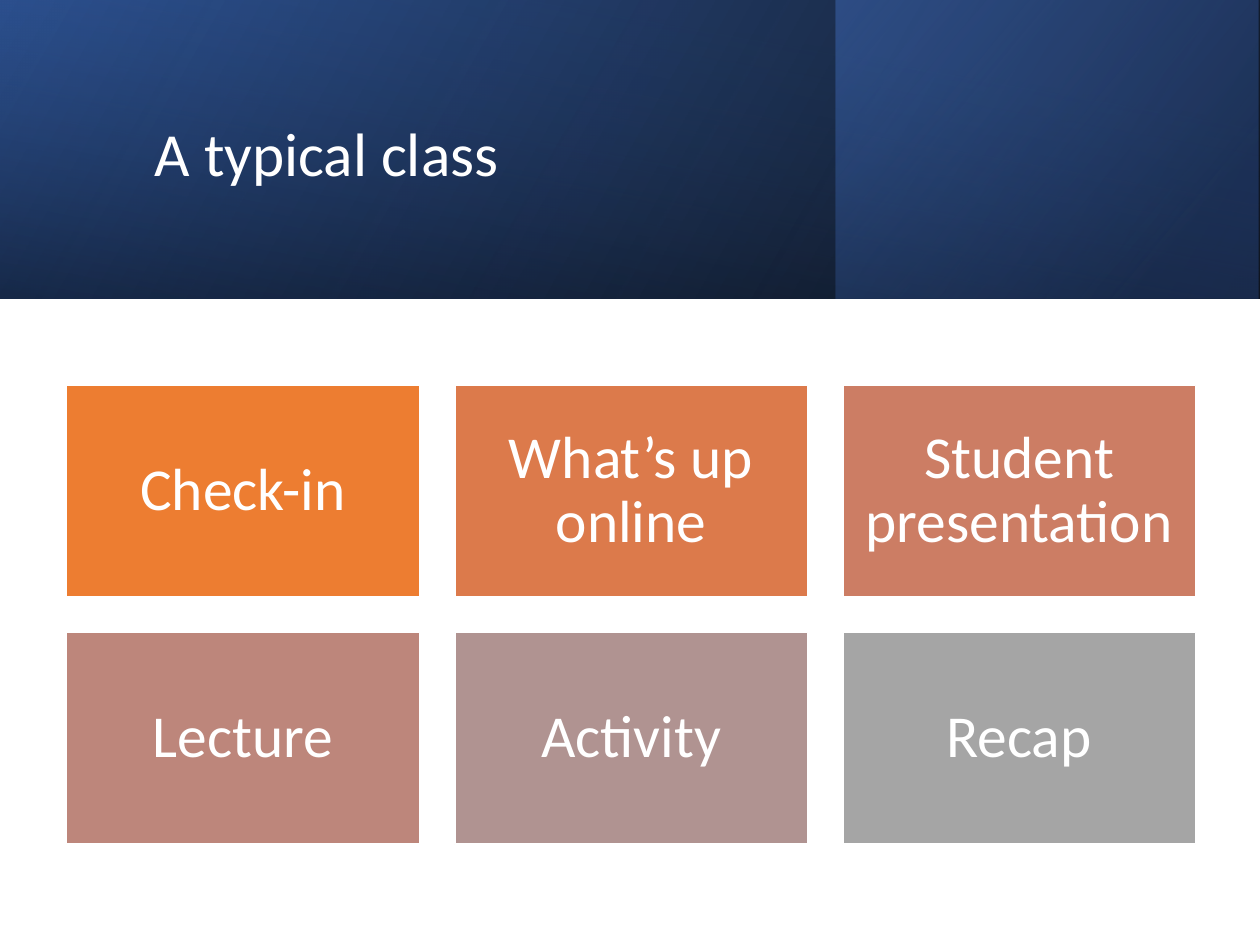
from lxml import etree
from pptx import Presentation
from pptx.dml.color import RGBColor
from pptx.enum.shapes import MSO_SHAPE
from pptx.enum.text import MSO_ANCHOR, PP_ALIGN
from pptx.oxml.ns import qn
from pptx.util import Pt

RECT = MSO_SHAPE.RECTANGLE
MIDDLE = MSO_ANCHOR.MIDDLE
LEFT, CENTER = PP_ALIGN.LEFT, PP_ALIGN.CENTER

WHITE = RGBColor(0xFF, 0xFF, 0xFF)
BLACK = RGBColor(0x00, 0x00, 0x00)
BLUE = RGBColor(0x44, 0x72, 0xC4)
MID_BLUE = RGBColor(0x2F, 0x55, 0x97)
DARK_BLUE = RGBColor(0x20, 0x38, 0x64)

FONT = "Calibri"
COLUMNS = 3
GAP = 20.16
CARDS = [
    ("Check-in", RGBColor(0xED, 0x7D, 0x31)),
    ("What’s up online", RGBColor(0xDC, 0x7A, 0x4B)),
    ("Student presentation", RGBColor(0xCC, 0x7D, 0x64)),
    ("Lecture", RGBColor(0xBD, 0x86, 0x7B)),
    ("Activity", RGBColor(0xB0, 0x93, 0x91)),
    ("Recap", RGBColor(0xA5, 0xA5, 0xA5)),
]


def add_rect(slide, x, y, w, h):
    s = slide.shapes.add_shape(RECT, Pt(x), Pt(y), Pt(w), Pt(h))
    s.shadow.inherit = False
    return s


def add_gradient_rect(slide, box, stops, angle, rotation=0):
    """Add a mirrored rectangle; stops are (position %, colour, opacity %)."""
    s = add_rect(slide, *box)
    s.line.fill.background()
    s.rotation = rotation
    sp_pr = s._element.spPr
    sp_pr.find(qn("a:xfrm")).set("flipH", "1")

    grad = etree.Element(qn("a:gradFill"), rotWithShape="1")
    stop_list = etree.SubElement(grad, qn("a:gsLst"))
    for position, color, opacity in stops:
        stop = etree.SubElement(stop_list, qn("a:gs"), pos=str(position * 1000))
        clr = etree.SubElement(stop, qn("a:srgbClr"), val=str(color))
        if opacity < 100:
            etree.SubElement(clr, qn("a:alpha"), val=str(opacity * 1000))
    etree.SubElement(grad, qn("a:lin"), ang=str(angle * 60000), scaled="0")
    sp_pr.find(qn("a:prstGeom")).addnext(grad)


def write_text(s, text, size, align):
    tf = s.text_frame
    tf.word_wrap = True
    tf.vertical_anchor = MIDDLE
    p = tf.paragraphs[0]
    p.alignment = align
    p.line_spacing = 0.9
    r = p.add_run()
    r.text = text
    r.font.name = FONT
    r.font.size = Pt(size)
    r.font.color.rgb = WHITE
    return tf


def add_header(slide, x, y, w, h):
    add_gradient_rect(slide, (x, y, w, h),
                      [(0, BLACK, 96), (100, MID_BLUE, 100)], 330)
    panel_x = x + 477.5
    add_gradient_rect(slide, (panel_x, y, x + w - 0.7 - panel_x, h),
                      [(19, DARK_BLUE, 68), (100, BLUE, 48)], 320)
    # A quarter turn about the centre makes this tall box cover the header.
    add_gradient_rect(slide, (x + (w - h) / 2, y + (h - w) / 2, h, w),
                      [(23, MID_BLUE, 16), (99, BLACK, 45)], 350, 270)
    title = slide.shapes.add_textbox(Pt(x + 81.4), Pt(y + 27.4),
                                     Pt(573.8), Pt(123.8))
    write_text(title, "A typical class", 35, LEFT)


def add_card_grid(slide, x, y, w, h):
    rows = len(CARDS) // COLUMNS
    card_w = (w - GAP * (COLUMNS - 1)) / COLUMNS
    card_h = (h - GAP * (rows - 1)) / rows
    for i, (text, color) in enumerate(CARDS):
        row, col = divmod(i, COLUMNS)
        s = add_rect(slide, x + col * (card_w + GAP),
                     y + row * (card_h + GAP), card_w, card_h)
        s.fill.solid()
        s.fill.fore_color.rgb = color
        s.line.color.rgb = WHITE
        s.line.width = Pt(1)
        tf = write_text(s, text, 34, CENTER)
        tf.margin_left = tf.margin_right = Pt(10)
        tf.margin_top = tf.margin_bottom = Pt(10)


def main():
    prs = Presentation()
    prs.slide_width, prs.slide_height = Pt(720), Pt(540)
    slide = prs.slides.add_slide(prs.slide_layouts[6])
    add_header(slide, 0, 0, 720, 170.7)
    add_card_grid(slide, 38.1, 220.3, 645.1, 262.1)
    prs.save("out.pptx")


if __name__ == "__main__":
    main()
